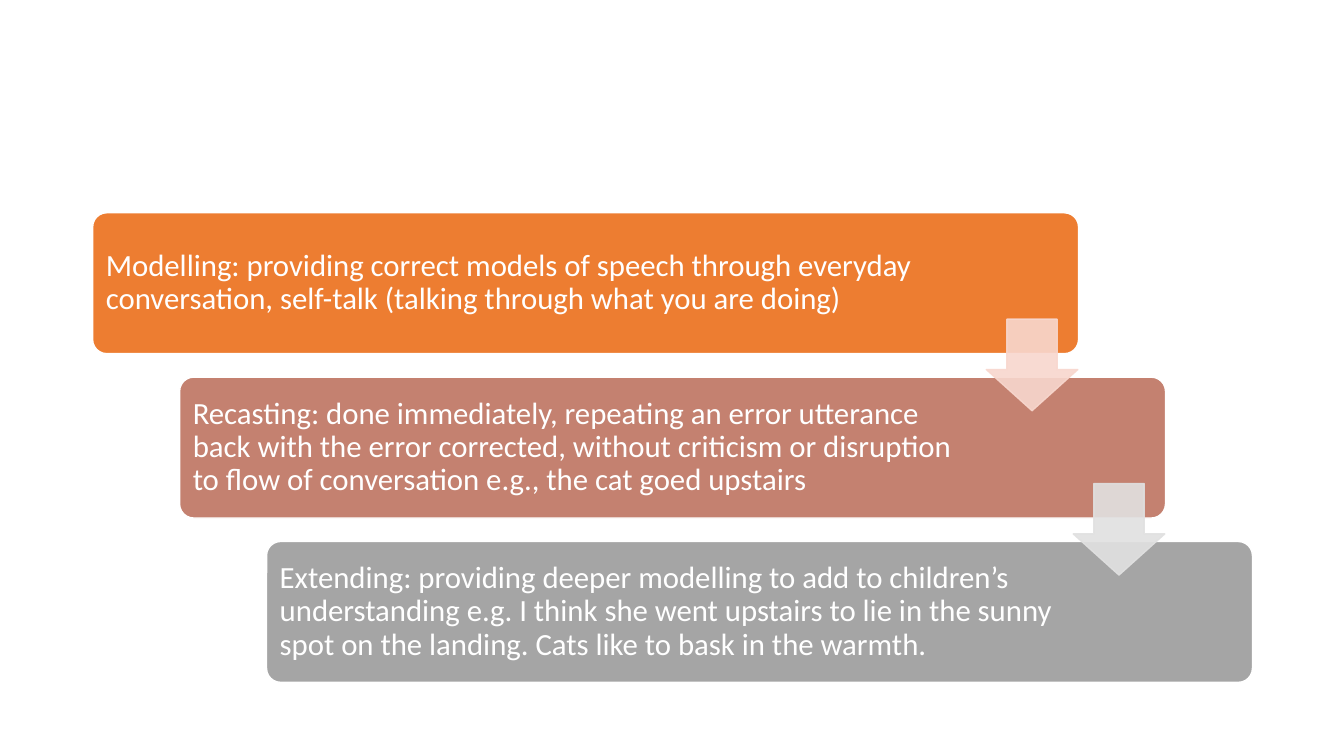
from lxml import etree
from pptx import Presentation
from pptx.dml.color import RGBColor
from pptx.enum.shapes import MSO_SHAPE
from pptx.enum.text import MSO_ANCHOR, PP_ALIGN
from pptx.oxml.ns import qn
from pptx.util import Pt

ROUNDED = MSO_SHAPE.ROUNDED_RECTANGLE
DOWN_ARROW = MSO_SHAPE.DOWN_ARROW
MIDDLE = MSO_ANCHOR.MIDDLE
LEFT = PP_ALIGN.LEFT

STEPS = [
    ("Modelling: providing correct models of speech through everyday "
     "conversation, self-talk (talking through what you are doing)", "ED7D31", 109),
    ("Recasting: done immediately, repeating an error utterance back with the "
     "error corrected, without criticism or disruption to flow of conversation "
     "e.g., the cat goed upstairs", "C48170", 134),
    ("Extending: providing deeper modelling to add to children’s understanding "
     "e.g. I think she went upstairs to lie in the sunny spot on the landing. "
     "Cats like to bask in the warmth.", "A5A5A5", 134),
]
ARROW_COLORS = ["F8D7CE", "E1E1E1"]
STEP_X, STEP_Y = 62.1, 117.4


def rgb(value):
    return RGBColor.from_string(value)


class SlideBuilder:
    font = "Calibri"
    size = 22
    text_color = "FFFFFF"
    line_color = "FFFFFF"

    def __init__(self, slide):
        self.s = slide

    def shape(self, kind, x, y, w, h, fill, line, adjustments):
        sp = self.s.shapes.add_shape(kind, Pt(x), Pt(y), Pt(w), Pt(h))
        sp.shadow.inherit = False
        for i, value in enumerate(adjustments):
            sp.adjustments[i] = value
        sp.fill.solid()
        sp.fill.fore_color.rgb = rgb(fill)
        sp.line.color.rgb = rgb(line)
        sp.line.width = Pt(1)
        return sp

    def step(self, x, y, text, fill, right_inset):
        sp = self.shape(ROUNDED, x, y, 704.2, 100.6, fill, self.line_color, [0.1])
        tf = sp.text_frame
        tf.word_wrap = True
        tf.vertical_anchor = MIDDLE
        tf.margin_left, tf.margin_right = Pt(6.5), Pt(right_inset)
        tf.margin_top = tf.margin_bottom = Pt(6.5)
        p = tf.paragraphs[0]
        p.text = text
        p.alignment = LEFT
        p.line_spacing = 0.9
        p.font.name = self.font
        p.font.size = Pt(self.size)
        p.font.color.rgb = rgb(self.text_color)

    def arrow(self, x, y, color):
        sp = self.shape(DOWN_ARROW, x, y, 65.4, 65.4, color, color, [0.55, 0.45])
        for clr in sp._element.spPr.iter(qn("a:srgbClr")):
            etree.SubElement(clr, qn("a:alpha"), val="90000")


def main():
    prs = Presentation()
    prs.slide_width, prs.slide_height = Pt(960), Pt(540)
    builder = SlideBuilder(prs.slides.add_slide(prs.slide_layouts[6]))
    for i, (text, fill, right_inset) in enumerate(STEPS):
        builder.step(66.2 + i * STEP_X, 152 + i * STEP_Y, text, fill, right_inset)
    for i, color in enumerate(ARROW_COLORS):
        builder.arrow(704.5 + i * STEP_X, 228 + i * STEP_Y, color)
    prs.save("out.pptx")


if __name__ == "__main__":
    main()
